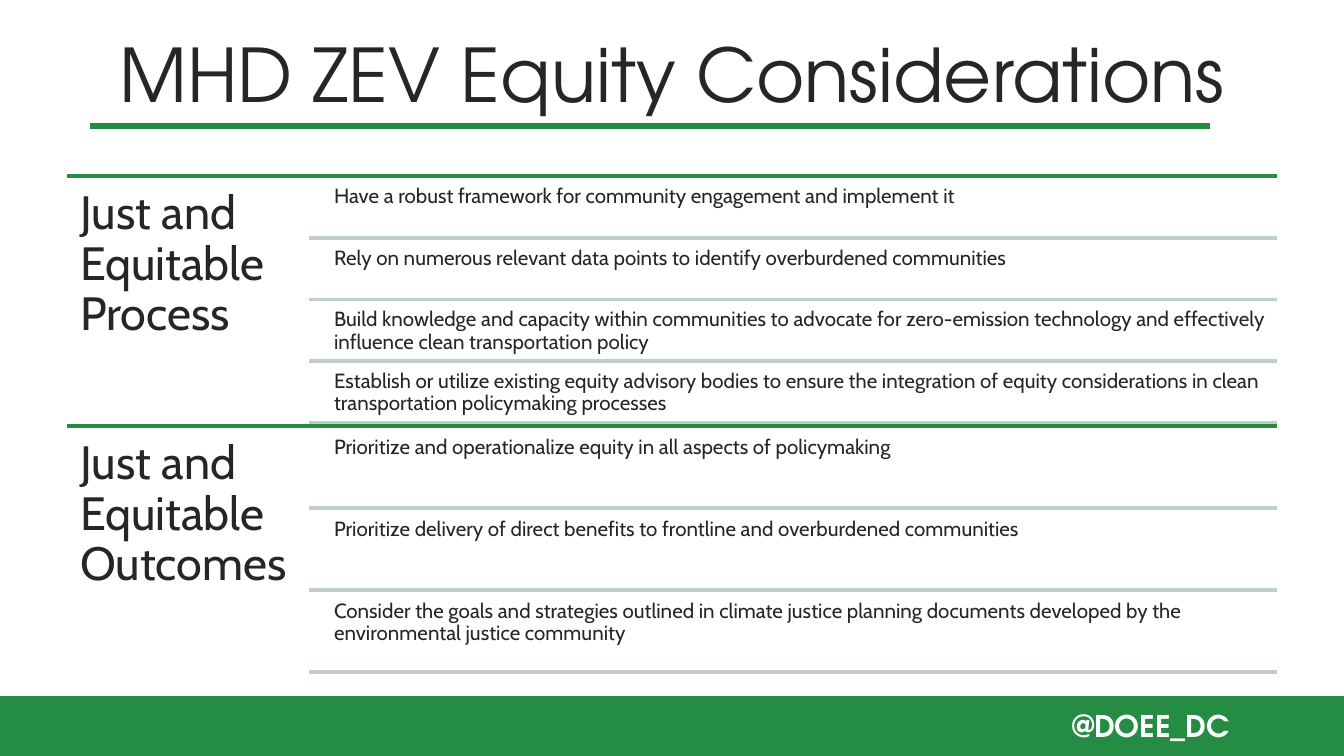
from lxml import etree
from pptx import Presentation
from pptx.dml.color import RGBColor
from pptx.enum.shapes import MSO_CONNECTOR, MSO_SHAPE
from pptx.enum.text import MSO_ANCHOR, MSO_AUTO_SIZE, PP_ALIGN
from pptx.oxml.ns import qn
from pptx.util import Inches, Pt

STRAIGHT = MSO_CONNECTOR.STRAIGHT
RECTANGLE = MSO_SHAPE.RECTANGLE
TOP, MIDDLE = MSO_ANCHOR.TOP, MSO_ANCHOR.MIDDLE
LEFT, CENTER, RIGHT = PP_ALIGN.LEFT, PP_ALIGN.CENTER, PP_ALIGN.RIGHT
NO_AUTOFIT = MSO_AUTO_SIZE.NONE
TITLE_ONLY = 5

# 16:9 slide, in inches
SLIDE_WIDTH = 10
SLIDE_HEIGHT = SLIDE_WIDTH * 9 / 16

COLORS = {"green": "248C43", "title_rule": "218B40", "pale": "BED0C0",
          "text": "262626", "white": "FFFFFF"}
HEADING_FONT, BODY_FONT = "TeX Gyre Adventor", "Cabin"

TITLE_FORMAT = {"name": HEADING_FONT, "size": Pt(39.6), "bold": False}
HANDLE_FORMAT = {"name": HEADING_FONT, "size": Pt(16), "bold": True}
LABEL_FORMAT = {"name": BODY_FONT, "size": Pt(25)}
ITEM_FORMAT = {"name": BODY_FONT, "size": Pt(11)}

# Section grid, in inches
SECTION_LEFT, SECTION_RIGHT = 0.5, 9.5
SECTION_TOP, SECTION_HEIGHT = 1.31, 1.86
LABEL_WIDTH = 1.8
RULE_LEFT = SECTION_LEFT + LABEL_WIDTH
ITEM_LEFT = RULE_LEFT + LABEL_WIDTH * 0.07 + 0.01
ITEM_WIDTH = 7.07
GAP_RATIO = 0.05  # gap between items, as a share of item height

SECTIONS = [
    ("Just and Equitable Process", [
        "Have a robust framework for community engagement and implement it",
        "Rely on numerous relevant data points to identify overburdened communities",
        "Build knowledge and capacity within communities to advocate for "
        "zero-emission technology and effectively influence clean transportation policy",
        "Establish or utilize existing equity advisory bodies to ensure the integration "
        "of equity considerations in clean transportation policymaking processes",
    ]),
    ("Just and Equitable Outcomes", [
        "Prioritize and operationalize equity in all aspects of policymaking",
        "Prioritize delivery of direct benefits to frontline and overburdened communities",
        "Consider the goals and strategies outlined in climate justice planning documents "
        "developed by the environmental justice community",
    ]),
]


def color(name):
    return RGBColor.from_string(COLORS[name])


def write_text(shape, text, font_format, color_name="text", alignment=LEFT,
               anchor=TOP, line_spacing=1.0):
    frame = shape.text_frame
    frame.word_wrap = True
    frame.auto_size = NO_AUTOFIT
    frame.vertical_anchor = anchor
    paragraph = frame.paragraphs[0]
    paragraph.text = text
    paragraph.alignment = alignment
    paragraph.line_spacing = line_spacing
    for attribute, value in font_format.items():
        setattr(paragraph.font, attribute, value)
    paragraph.font.color.rgb = color(color_name)


def add_text(slide, left, top, width, height, text, font_format, inset=None, **options):
    box = slide.shapes.add_textbox(Inches(left), Inches(top), Inches(width), Inches(height))
    if inset is not None:
        for side in ("left", "top", "right", "bottom"):
            setattr(box.text_frame, f"margin_{side}", Inches(inset))
    write_text(box, text, font_format, **options)


def add_rule(slide, left, right, y, color_name, width=2):
    rule = slide.shapes.add_connector(
        STRAIGHT, Inches(left), Inches(y), Inches(right), Inches(y))
    rule.line.color.rgb = color(color_name)
    rule.line.width = Pt(width)
    etree.SubElement(rule._element.spPr, qn("a:effectLst"))


def add_footer(slide):
    band = slide.shapes.add_shape(
        RECTANGLE, Inches(0), Inches(5.18), Inches(SLIDE_WIDTH), Inches(0.51))
    band.shadow.inherit = False
    band.fill.solid()
    band.fill.fore_color.rgb = color("green")
    band.line.fill.background()
    add_text(slide, 7.75, 5.22, 1.5, 0.37, "@DOEE_DC", HANDLE_FORMAT,
             color_name="white", alignment=RIGHT)


def add_title(slide):
    title = slide.shapes.title
    title.left, title.top = Inches(0.5), Inches(0.07)
    title.width, title.height = Inches(9), Inches(0.94)
    write_text(title, "MHD ZEV Equity Considerations", TITLE_FORMAT,
               alignment=CENTER, anchor=MIDDLE)
    add_rule(slide, 0.67, 9, 0.94, "title_rule", 3)


def add_section(slide, top, label, items):
    add_rule(slide, SECTION_LEFT, SECTION_RIGHT, top, "green")
    add_text(slide, SECTION_LEFT, top, LABEL_WIDTH, SECTION_HEIGHT, label,
             LABEL_FORMAT, inset=0.1, line_spacing=0.9)

    # Items share the height, with a gap before each and after the last
    count = len(items)
    item_height = SECTION_HEIGHT / (count + (count + 1) * GAP_RATIO)
    gap = item_height * GAP_RATIO
    for index, item in enumerate(items):
        item_top = top + gap + index * (item_height + gap)
        add_text(slide, ITEM_LEFT, item_top, ITEM_WIDTH, item_height, item,
                 ITEM_FORMAT, inset=0.05, line_spacing=0.9)
        add_rule(slide, RULE_LEFT, SECTION_RIGHT, item_top + item_height, "pale")


def main():
    presentation = Presentation()
    presentation.slide_width = Inches(SLIDE_WIDTH)
    presentation.slide_height = Inches(SLIDE_HEIGHT)
    slide = presentation.slides.add_slide(presentation.slide_layouts[TITLE_ONLY])

    add_footer(slide)
    add_title(slide)
    for index, (label, items) in enumerate(SECTIONS):
        add_section(slide, SECTION_TOP + index * SECTION_HEIGHT, label, items)

    presentation.save("out.pptx")


if __name__ == "__main__":
    main()
